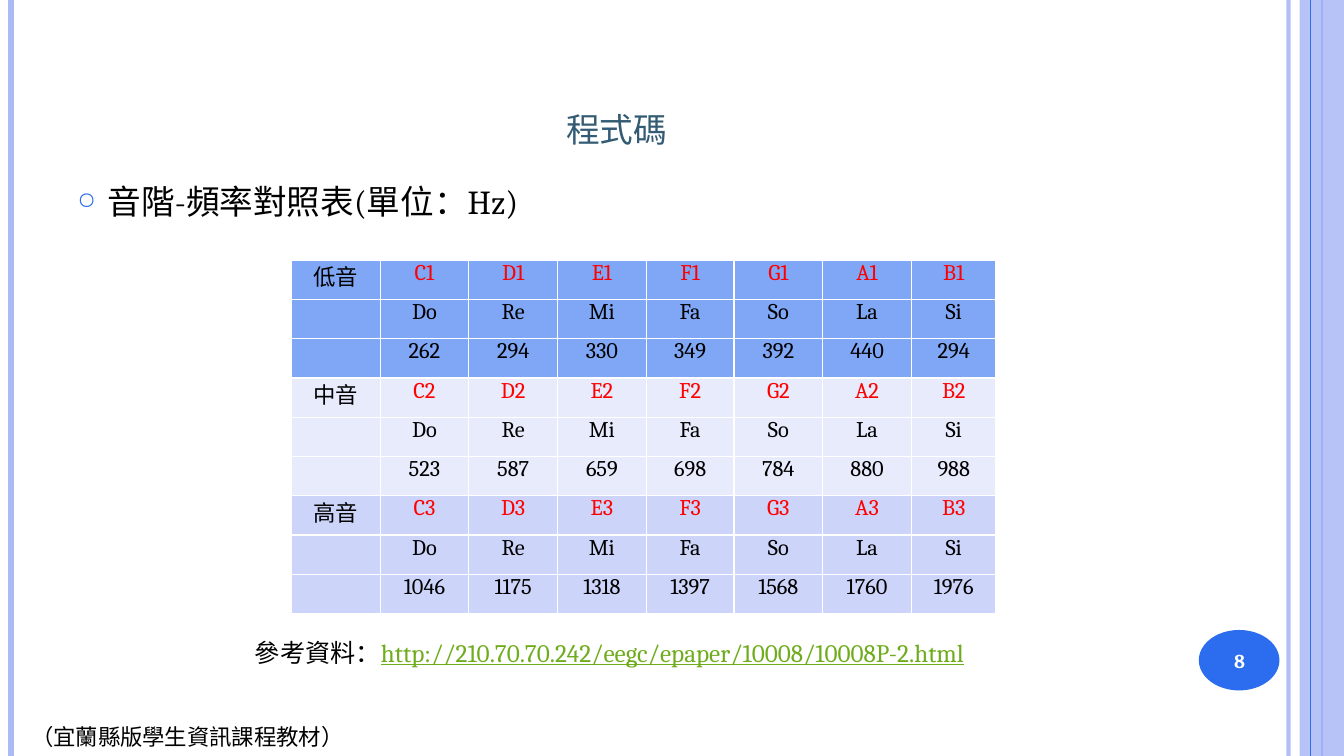
from lxml.etree import SubElement
from pptx import Presentation
from pptx.dml.color import RGBColor
from pptx.enum.shapes import MSO_CONNECTOR as Connector, MSO_SHAPE as Shape
from pptx.enum.text import MSO_ANCHOR as Anchor, PP_ALIGN as Align
from pptx.oxml.ns import qn
from pptx.util import Inches, Pt

WIDTH, HEIGHT = 13.33, 7.5
FONT = "Cambria"
BLACK, WHITE, RED = "000000", "FFFFFF", "FF0000"
BLUE, LAVENDER, TEAL, GREEN = "2C6DF0", "ADBAF6", "335B74", "6EAC1C"

TITLE = "程式碼"
HEADING = "音階-頻率對照表(單位：Hz)"
FOOTER = "（宜蘭縣版學生資訊課程教材）"
SOURCE_LABEL = "參考資料："
SOURCE_ADDRESS = "http://210.70.70.242/eegc/epaper/10008/10008P-2.html"
PAGE_NUMBER = "8"

NOTES = ["C", "D", "E", "F", "G", "A", "B"]
SYLLABLES = ["Do", "Re", "Mi", "Fa", "So", "La", "Si"]
OCTAVES = [
    ("低音", "80A7F6", [262, 294, 330, 349, 392, 440, 294]),
    ("中音", "E8EBFC", [523, 587, 659, 698, 784, 880, 988]),
    ("高音", "CDD4F9", [1046, 1175, 1318, 1397, 1568, 1760, 1976]),
]
COLUMN_WIDTHS = [0.88] * 4 + [0.87] + [0.88] * 2 + [0.84]
ROW_HEIGHT = 0.39
TABLE_LEFT, TABLE_TOP = 2.89, 2.58

BACK_RULES = [(12.78, LAVENDER, 3, 93), (0.11, LAVENDER, 4.5, 100), (13.11, BLUE, 1.5, 100)]
FRONT_RULE = (13, BLUE, 0.75, 100)
BAND_LEFT = 12.89


def color(value):
    return RGBColor.from_string(value)


def set_opacity(element, percent):
    if percent < 100:
        tone = next(element.iter(qn("a:srgbClr")))
        SubElement(tone, qn("a:alpha"), val=str(percent * 1000))


def add_rule(page, left, tone, weight, opacity):
    rule = page.shapes.add_connector(
        Connector.STRAIGHT, Inches(left), 0, Inches(left), Inches(HEIGHT))
    rule.line.color.rgb = color(tone)
    rule.line.width = Pt(weight)
    properties = rule._element.spPr
    set_opacity(properties, opacity)
    SubElement(properties, qn("a:effectLst"))


def add_solid(page, kind, area, tone, opacity=100):
    solid = page.shapes.add_shape(kind, *map(Inches, area))
    solid.shadow.inherit = False
    solid.fill.solid()
    solid.fill.fore_color.rgb = color(tone)
    solid.line.fill.background()
    set_opacity(solid._element.spPr, opacity)


def add_span(para, text, size=16, tone=BLACK, bold=False, underline=False, small_caps=False):
    span = para.add_run()
    span.text = text
    font = span.font
    font.name, font.size, font.bold = FONT, Pt(size), bold
    font.color.rgb = color(tone)
    if underline:
        font.underline = True
    if small_caps:
        span._r.get_or_add_rPr().set("cap", "small")


def add_text(page, area, text, wrap=True, anchor=Anchor.TOP, align=Align.LEFT, **style):
    box = page.shapes.add_textbox(*map(Inches, area))
    frame = box.text_frame
    frame.word_wrap = wrap
    frame.vertical_anchor = anchor
    para = frame.paragraphs[0]
    para.alignment = align
    add_span(para, text, **style)
    return para


def add_bullet(para, symbol, tone, percent, indent):
    properties = para._p.get_or_add_pPr()
    properties.set("marL", str(Inches(indent)))
    properties.set("indent", str(-Inches(indent)))
    bullet_color = SubElement(properties, qn("a:buClr"))
    SubElement(bullet_color, qn("a:srgbClr"), val=tone)
    SubElement(properties, qn("a:buSzPct"), val=str(percent * 1000))
    SubElement(properties, qn("a:buChar"), char=symbol)


def format_cell(cell, text, fill, tone):
    properties = cell._tc.get_or_add_tcPr()
    for side in ("lnL", "lnR", "lnT", "lnB"):
        border = SubElement(properties, qn(f"a:{side}"), w=str(Pt(1)))
        SubElement(SubElement(border, qn("a:solidFill")), qn("a:srgbClr"), val=WHITE)
    cell.fill.solid()
    cell.fill.fore_color.rgb = color(fill)
    cell.margin_left = cell.margin_right = Inches(0.07)
    cell.margin_top = cell.margin_bottom = 0
    if text:
        para = cell.text_frame.paragraphs[0]
        para.alignment = Align.CENTER
        add_span(para, text, tone=tone)


def add_scale_table(page):
    rows = []
    for number, (name, fill, frequencies) in enumerate(OCTAVES, 1):
        rows.append((fill, RED, [name] + [f"{note}{number}" for note in NOTES]))
        rows.append((fill, BLACK, [""] + SYLLABLES))
        rows.append((fill, BLACK, [""] + [str(value) for value in frequencies]))
    area = (TABLE_LEFT, TABLE_TOP, sum(COLUMN_WIDTHS), ROW_HEIGHT * len(rows))
    table = page.shapes.add_table(len(rows), len(COLUMN_WIDTHS), *map(Inches, area)).table
    table.first_row = table.horz_banding = False
    for column, width in zip(table.columns, COLUMN_WIDTHS):
        column.width = Inches(width)
    for row, (fill, tone, texts) in zip(table.rows, rows):
        row.height = Inches(ROW_HEIGHT)
        for index, (cell, text) in enumerate(zip(row.cells, texts)):
            format_cell(cell, text, fill, tone if index else BLACK)


def main():
    deck = Presentation()
    deck.slide_width, deck.slide_height = Inches(WIDTH), Inches(HEIGHT)
    page = deck.slides.add_slide(deck.slide_layouts[6])

    for rule in BACK_RULES:
        add_rule(page, *rule)
    add_solid(page, Shape.RECTANGLE, (BAND_LEFT, 0, WIDTH - BAND_LEFT, HEIGHT), LAVENDER, 87)
    add_rule(page, *FRONT_RULE)
    add_solid(page, Shape.OVAL, (11.89, 6.25, 0.8, 0.6), BLUE)

    add_text(page, (0.21, 7.12, 3.34, 0.37), FOOTER, wrap=False)
    add_text(page, (0.67, 0.79, 10.89, 0.76), TITLE, anchor=Anchor.BOTTOM,
             align=Align.CENTER, size=30, tone=TEAL, small_caps=True)
    add_text(page, (11.85, 6.27, 0.89, 0.57), PAGE_NUMBER, anchor=Anchor.MIDDLE,
             align=Align.CENTER, size=14, tone=WHITE, bold=True)
    heading = add_text(page, (0.67, 1.75, 10.89, 5.33), HEADING, size=24)
    add_bullet(heading, "○", BLUE, 70, 0.3)
    source = add_text(page, (2.43, 6.27, 7.81, 0.4), SOURCE_LABEL, size=18)
    add_span(source, SOURCE_ADDRESS, size=18, tone=GREEN, underline=True)
    add_scale_table(page)

    deck.save("out.pptx")


if __name__ == "__main__":
    main()
